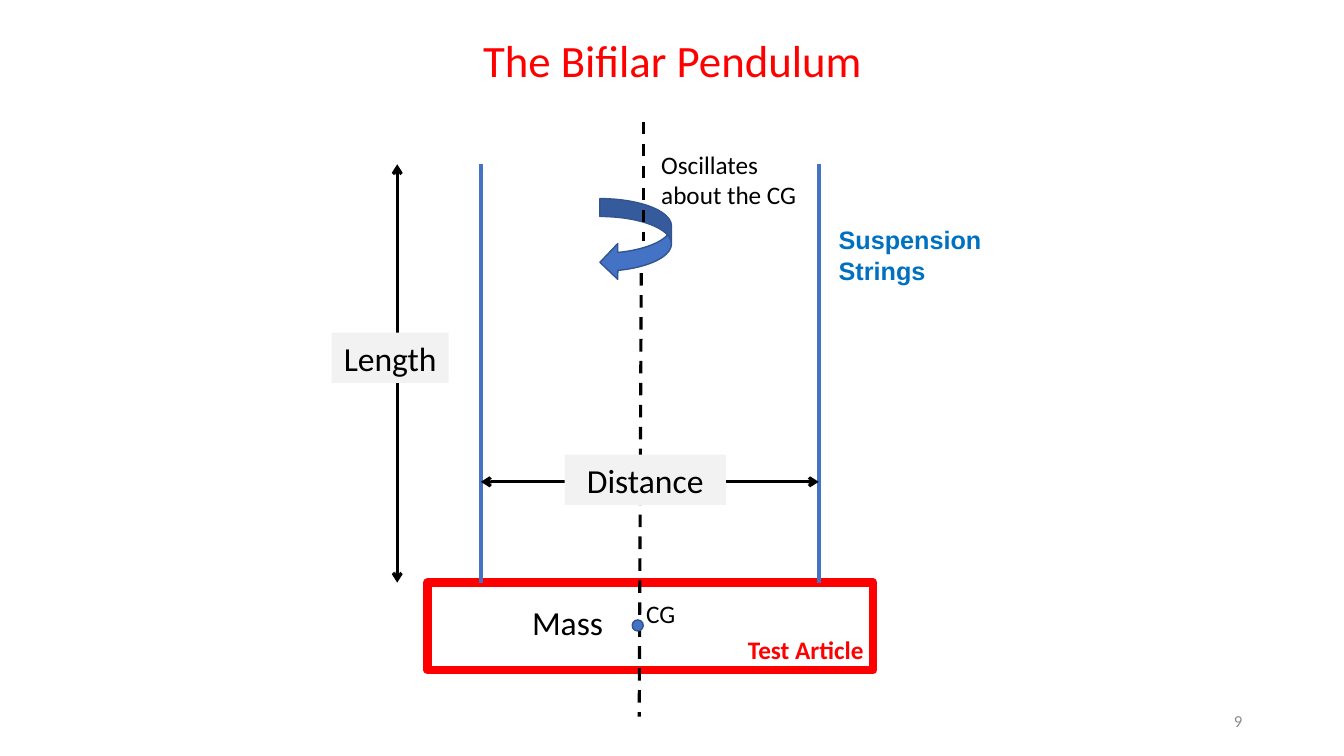
from lxml.etree import SubElement
from pptx import Presentation
from pptx.dml.color import RGBColor
from pptx.enum.dml import MSO_LINE
from pptx.enum.shapes import MSO_CONNECTOR, MSO_SHAPE
from pptx.enum.text import MSO_ANCHOR, MSO_AUTO_SIZE, PP_ALIGN
from pptx.oxml.ns import qn
from pptx.util import Inches, Pt

COLORS = {
    "black": "000000", "red": "FF0000", "blue": "4472C4", "outline": "325491",
    "strings": "0070C0", "label": "F2F2F2", "number": "8C8C8C",
}


def rgb(name):
    return RGBColor.from_string(COLORS[name])


def set_text(tf, text, size=18, color="black", font="Calibri", bold=False,
             align=PP_ALIGN.LEFT, anchor=MSO_ANCHOR.TOP, spacing=None, after=None):
    tf.word_wrap = True
    tf.auto_size = MSO_AUTO_SIZE.NONE
    tf.vertical_anchor = anchor
    p = tf.paragraphs[0]
    p.alignment = align
    if spacing:
        p.line_spacing = spacing
    if after:
        p.space_after = Pt(after)
    r = p.add_run()
    r.text = text
    r.font.size = Pt(size)
    r.font.name = font
    r.font.bold = bold
    r.font.color.rgb = rgb(color)


class Diagram:
    def __init__(self, prs):
        self.s = prs.slides.add_slide(prs.slide_layouts[5])

    def title(self, text, box, **fmt):
        sp = self.s.shapes.title
        sp.left, sp.top, sp.width, sp.height = map(Inches, box)
        set_text(sp.text_frame, text, **fmt)

    def text(self, text, box, **fmt):
        sp = self.s.shapes.add_textbox(*map(Inches, box))
        set_text(sp.text_frame, text, **fmt)

    def shape(self, kind, box, fill=None, line=None, width=1):
        sp = self.s.shapes.add_shape(kind, *map(Inches, box))
        sp.shadow.inherit = False
        if fill:
            sp.fill.solid()
            sp.fill.fore_color.rgb = rgb(fill)
        else:
            sp.fill.background()
        if line:
            sp.line.color.rgb = rgb(line)
            sp.line.width = Pt(width)
        else:
            sp.line.fill.background()
        return sp

    def label(self, text, box):
        sp = self.shape(MSO_SHAPE.RECTANGLE, box, fill="label")
        set_text(sp.text_frame, text, size=24, align=PP_ALIGN.CENTER)

    def line(self, start, end, color="black", width=2.25, dash=False, arrows=False):
        c = self.s.shapes.add_connector(
            MSO_CONNECTOR.STRAIGHT, *map(Inches, start + end))
        c.line.color.rgb = rgb(color)
        c.line.width = Pt(width)
        if dash:
            c.line.dash_style = MSO_LINE.DASH
        spPr = c._element.spPr
        if arrows:
            ln = spPr.find(qn("a:ln"))
            for tag in ("a:headEnd", "a:tailEnd"):
                SubElement(ln, qn(tag), type="arrow")
        SubElement(spPr, qn("a:effectLst"))


def main():
    prs = Presentation()
    prs.slide_width, prs.slide_height = Inches(13.33), Inches(7.5)
    d = Diagram(prs)
    top, bottom = 1.63, 5.78
    left, right = 4.77, 8.12

    d.title("The Bifilar Pendulum", (2.17, 0.22, 9, 0.81), size=32, color="red",
            align=PP_ALIGN.CENTER, anchor=MSO_ANCHOR.MIDDLE, spacing=0.9)
    d.shape(MSO_SHAPE.CURVED_LEFT_ARROW, (5.95, 1.97, 0.71, 0.81), "blue", "outline")
    d.shape(MSO_SHAPE.RECTANGLE, (4.24, bottom, 4.42, 0.87), line="red", width=6)
    for x in (left, right):
        d.line((x, top), (x, bottom), color="blue", width=3)
    d.text("Mass", (4.9, 5.92, 1.46, 0.5), size=24, align=PP_ALIGN.CENTER)
    d.line((right, 4.78), (left, 4.78), arrows=True)
    d.line((3.94, top), (3.94, bottom), arrows=True)
    d.label("Length", (3.29, 3.3, 1.16, 0.5))
    d.text("Test Article", (7.32, 6.24, 1.61, 0.5), color="red", bold=True, after=10)
    d.text("Suspension Strings", (8.22, 2.18, 1.83, 0.87), color="strings",
           font="Arial", bold=True, after=10)
    d.line((6.38, 1.21), (6.38, 2.39), dash=True)
    d.line((6.36, 2.71), (6.34, 7.11), dash=True)
    d.label("Distance", (5.6, 4.51, 1.6, 0.5))
    d.text("Oscillates about the CG", (6.46, 1.43, 1.56, 0.71))
    d.text("CG", (6.31, 5.89, 0.55, 0.4))
    d.shape(MSO_SHAPE.OVAL, (6.27, 6.15, 0.11, 0.11), "blue", "outline")
    d.text("9", (9.42, 6.95, 3, 0.4), size=12, color="number",
           align=PP_ALIGN.RIGHT, anchor=MSO_ANCHOR.MIDDLE)
    prs.save("out.pptx")


if __name__ == "__main__":
    main()
